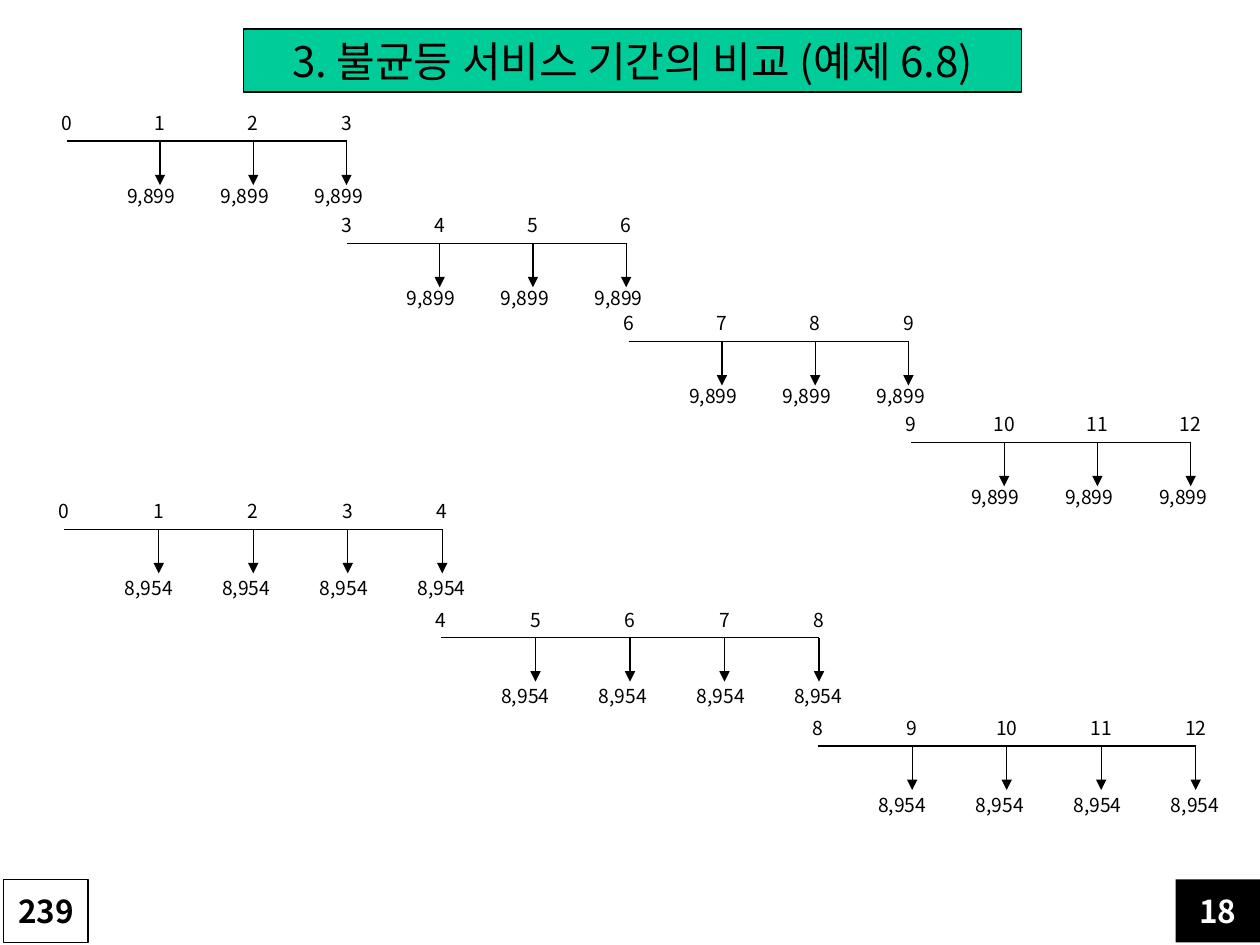
from pptx import Presentation
from pptx.dml.color import RGBColor
from pptx.enum.shapes import MSO_CONNECTOR, MSO_SHAPE
from pptx.enum.text import MSO_ANCHOR, PP_ALIGN
from pptx.oxml.ns import qn
from pptx.util import Inches, Pt
from lxml import etree

RECT = MSO_SHAPE.RECTANGLE
STRAIGHT = MSO_CONNECTOR.STRAIGHT
MIDDLE = MSO_ANCHOR.MIDDLE
LEFT, CENTER = PP_ALIGN.LEFT, PP_ALIGN.CENTER

FONT = "Noto Sans CJK KR"
COLORS = {"black": "000000", "white": "FFFFFF", "green": "00CC99"}

# Each plan: amount, periods, tick step, label step, label drop,
# and the (left, top) of each service cycle
PLANS = [
    ("9,899", 3, 0.74, 0.745, 0.32,
     [(0.53, 1.12), (2.75, 1.93), (4.99, 2.71), (7.23, 3.51)]),
    ("8,954", 4, 0.75, 0.775, 0.35,
     [(0.51, 4.2), (3.5, 5.06), (6.49, 5.92)]),
]


def color(name):
    return RGBColor.from_string(COLORS[name])


def write(shape, text, size, ink="black", bold=False, align=CENTER):
    frame = shape.text_frame
    frame.word_wrap = False
    frame.vertical_anchor = MIDDLE
    frame.margin_top = frame.margin_bottom = 0
    para = frame.paragraphs[0]
    para.text = text
    para.alignment = align
    font = para.font
    font.name, font.size, font.bold = FONT, Pt(size), bold
    font.color.rgb = color(ink)
    # Hangul takes the East Asian typeface
    props = para._p.get_or_add_pPr().find(qn("a:defRPr"))
    etree.SubElement(props, qn("a:ea"), typeface=FONT)


def add_label(slide, x, y, w, h, text, align=CENTER):
    box = slide.shapes.add_textbox(Inches(x), Inches(y), Inches(w), Inches(h))
    write(box, text, 11, align=align)


def add_box(slide, x, y, w, h, text, size, fill, ink="black", bold=False):
    box = slide.shapes.add_shape(RECT, Inches(x), Inches(y), Inches(w), Inches(h))
    box.shadow.inherit = False
    box.fill.solid()
    box.fill.fore_color.rgb = color(fill)
    if fill == "black":
        box.line.fill.background()
    else:
        box.line.color.rgb = color("black")
        box.line.width = Pt(0.75)
    write(box, text, size, ink, bold)


def add_line(slide, x1, y1, x2, y2, arrow=False):
    line = slide.shapes.add_connector(
        STRAIGHT, Inches(x1), Inches(y1), Inches(x2), Inches(y2))
    line.line.color.rgb = color("black")
    line.line.width = Pt(0.75)
    if arrow:
        etree.SubElement(line.line._get_or_add_ln(), qn("a:tailEnd"), type="triangle")
    etree.SubElement(line._element.spPr, qn("a:effectLst"))


def add_cycle(slide, x, y, first, amount, count, step, gap, drop):
    """Draw one time axis with its years and yearly costs."""
    add_line(slide, x, y, x + count * step, y)
    for i in range(count + 1):
        tick = x + i * step
        year = str(first + i)
        wide = 0.38 if len(year) > 1 else 0.29
        add_label(slide, tick - wide / 2, y - 0.29, wide, 0.29, year)
        if i:
            add_line(slide, tick, y, tick, y + 0.35, arrow=True)
            left = x + 0.38 + (i - 1) * gap
            add_label(slide, left, y + drop, 0.59, 0.23, amount, LEFT)


def main():
    deck = Presentation()
    deck.slide_width, deck.slide_height = Inches(10), Inches(7.5)
    slide = deck.slides.add_slide(deck.slide_layouts[6])

    # Title
    add_box(slide, 1.93, 0.23, 6.18, 0.5,
            "3. 불균등 서비스 기간의 비교 (예제 6.8)", 24, "green")

    # Cash flows of both plans
    for amount, count, step, gap, drop, spots in PLANS:
        for n, (x, y) in enumerate(spots):
            add_cycle(slide, x, y, n * count, amount, count, step, gap, drop)

    # Page numbers
    add_box(slide, 9.33, 6.98, 0.67, 0.5, "18", 18, "black", "white", True)
    add_box(slide, 0.03, 6.98, 0.67, 0.5, "239", 18, "white", bold=True)

    deck.save("out.pptx")


if __name__ == "__main__":
    main()
